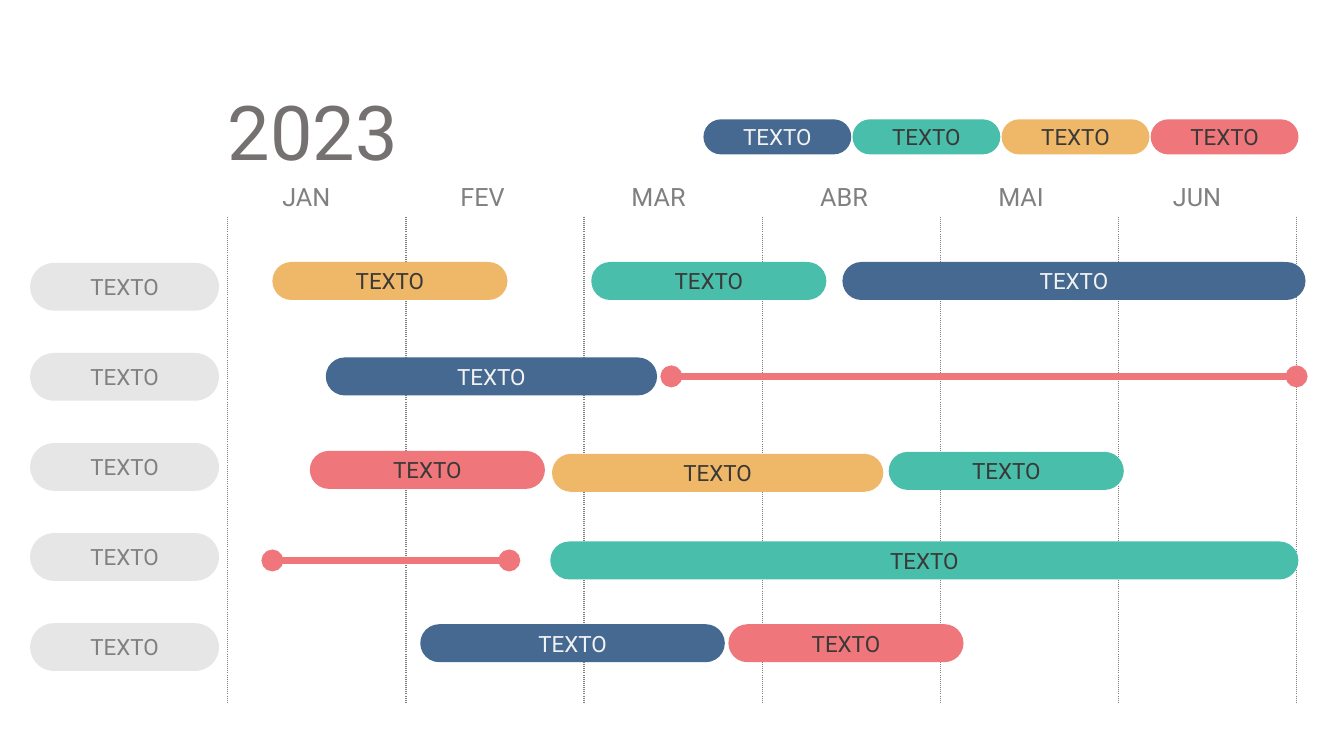
"""Build a half-year schedule with monthly columns, task bars and a colour legend."""
from typing import NamedTuple

from lxml.etree import SubElement
from pptx import Presentation
from pptx.dml.color import RGBColor
from pptx.enum.shapes import MSO_CONNECTOR, MSO_SHAPE
from pptx.enum.text import MSO_ANCHOR, MSO_AUTO_SIZE, PP_ALIGN
from pptx.oxml.ns import qn
from pptx.util import Inches, Length, Pt

FONT = "Roboto"
COLORS = {
    "blue": "456990",
    "teal": "49BEAA",
    "amber": "EEB868",
    "coral": "EF767A",
    "track": "E7E6E6",
    "grey": "808080",
    "year": "767171",
    "dark": "3B3838",
    "light": "F2F2F2",
}
INK = {"blue": "light", "track": "grey"}
LEFT, TOP = 2.26, 2.15
MONTH, TRACK = 10.6 / 6, 4.83 / 5
TRACKS = 5


class Bar(NamedTuple):
    """A pill placed by its first month, middle row, and size in months and rows."""
    start: float
    middle: float
    months: float
    color: str
    rows: float = 0.39


class Span(NamedTuple):
    """A milestone line between two months."""
    start: float
    end: float
    row: float


class Month(NamedTuple):
    """A month heading and its left edge in months."""
    name: str
    start: float


MONTHS = [Month("JAN", 0.25), Month("FEV", 1.25), Month("MAR", 2.21),
          Month("ABR", 3.27), Month("MAI", 4.27), Month("JUN", 5.25)]
TRACK_LABELS = [Bar(-1.11, 0.72 + 0.925 * track, 1.06, "track", 0.49)
                for track in range(TRACKS)]
LEGEND = [Bar(2.67 + 0.837 * place, -0.82, 0.83, color, 0.36)
          for place, color in enumerate(("blue", "teal", "amber", "coral"))]
TASKS = [
    Bar(0.25, 0.66, 1.32, "amber"),
    Bar(2.04, 0.66, 1.32, "teal"),
    Bar(3.45, 0.66, 2.6, "blue"),
    Bar(0.55, 1.64, 1.86, "blue"),
    Bar(1.82, 2.63, 1.86, "amber"),
    Bar(0.46, 2.6, 1.32, "coral"),
    Bar(3.71, 2.61, 1.32, "teal"),
    Bar(1.81, 3.53, 4.2, "teal"),
    Bar(1.08, 4.38, 1.71, "blue"),
    Bar(2.81, 4.38, 1.32, "coral"),
]
SPANS = [Span(2.49, 6, 1.64), Span(0.25, 1.58, 3.53)]


def rgb(color: str) -> RGBColor:
    return RGBColor.from_string(COLORS[color])


def at_month(months: float) -> Length:
    return Inches(LEFT + months * MONTH)


def at_row(rows: float) -> Length:
    return Inches(TOP + rows * TRACK)


def write(frame, text: str, size: float, color: str, align=PP_ALIGN.LEFT) -> None:
    paragraph = frame.paragraphs[0]
    paragraph.alignment = align
    run = paragraph.add_run()
    run.text = text
    run.font.name = FONT
    run.font.size = Pt(size)
    run.font.color.rgb = rgb(color)


def draw_year(slide) -> None:
    year = slide.shapes.title
    year.left, year.top = Inches(2.16), Inches(0.79)
    year.width, year.height = Inches(1.96), Inches(1.01)
    frame = year.text_frame
    frame.word_wrap = False
    frame.auto_size = MSO_AUTO_SIZE.NONE
    frame.vertical_anchor = MSO_ANCHOR.TOP
    write(frame, "2023", 54, "year")


def draw_calendar(slide) -> None:
    calendar = slide.shapes.add_table(
        TRACKS, len(MONTHS), at_month(0), at_row(0),
        Inches(len(MONTHS) * MONTH), Inches(TRACKS * TRACK)).table
    calendar.first_row = calendar.horz_banding = False
    for cell in calendar.iter_cells():
        properties = cell._tc.get_or_add_tcPr()
        for side in ("a:lnL", "a:lnR"):
            border = SubElement(properties, qn(side), w=str(Pt(1)))
            paint = SubElement(border, qn("a:solidFill"))
            SubElement(paint, qn("a:srgbClr"), val=COLORS["grey"])
            SubElement(border, qn("a:prstDash"), val="sysDot")
        for side in ("a:lnT", "a:lnB"):
            SubElement(SubElement(properties, qn(side)), qn("a:noFill"))
        cell.fill.background()


def draw_month(slide, month: Month) -> None:
    heading = slide.shapes.add_textbox(
        at_month(month.start), Inches(1.75), Inches(1.1), Inches(0.4))
    heading.text_frame.word_wrap = True
    write(heading.text_frame, month.name, 18, "grey")


def draw_bar(slide, bar: Bar) -> None:
    pill = slide.shapes.add_shape(
        MSO_SHAPE.ROUNDED_RECTANGLE,
        at_month(bar.start), at_row(bar.middle - bar.rows / 2),
        Inches(bar.months * MONTH), Inches(bar.rows * TRACK))
    pill.adjustments[0] = 0.5
    pill.shadow.inherit = False
    pill.fill.solid()
    pill.fill.fore_color.rgb = rgb(bar.color)
    pill.line.fill.background()
    pill.text_frame.vertical_anchor = MSO_ANCHOR.MIDDLE
    write(pill.text_frame, "TEXTO", 16, INK.get(bar.color, "dark"), PP_ALIGN.CENTER)


def draw_span(slide, span: Span) -> None:
    milestone = slide.shapes.add_connector(
        MSO_CONNECTOR.STRAIGHT, at_month(span.start), at_row(span.row),
        at_month(span.end), at_row(span.row))
    milestone.line.width = Pt(5.25)
    milestone.line.color.rgb = rgb("coral")
    outline = milestone.line._get_or_add_ln()
    for end in ("a:headEnd", "a:tailEnd"):
        SubElement(outline, qn(end), type="oval")
    SubElement(milestone._element.spPr, qn("a:effectLst"))


def main() -> None:
    deck = Presentation()
    deck.slide_width, deck.slide_height = Inches(13.33), Inches(7.5)
    slide = deck.slides.add_slide(deck.slide_layouts[5])
    draw_year(slide)
    draw_calendar(slide)
    for month in MONTHS:
        draw_month(slide, month)
    for span in SPANS:
        draw_span(slide, span)
    for bar in TRACK_LABELS + TASKS + LEGEND:
        draw_bar(slide, bar)
    deck.save("out.pptx")


if __name__ == "__main__":
    main()
